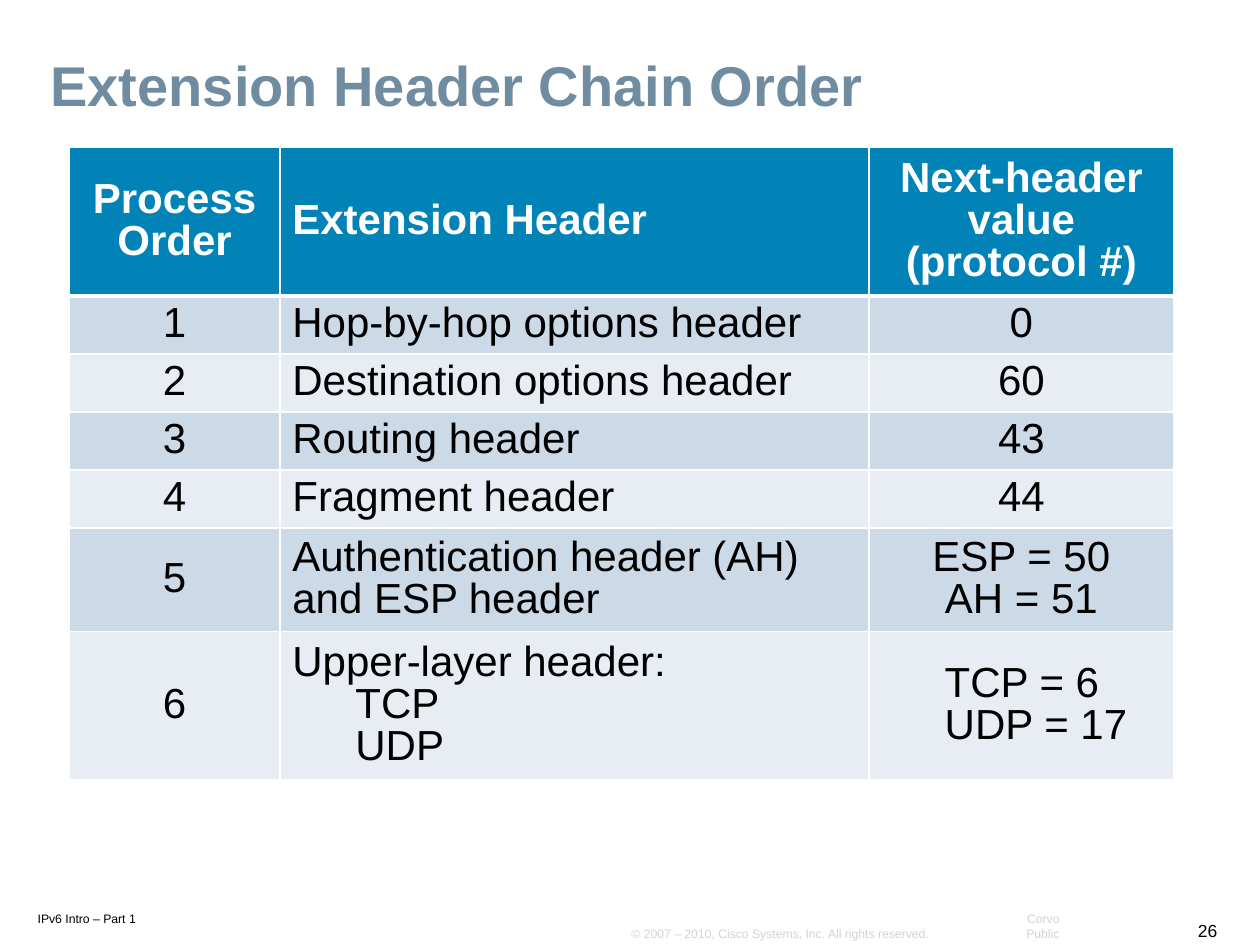
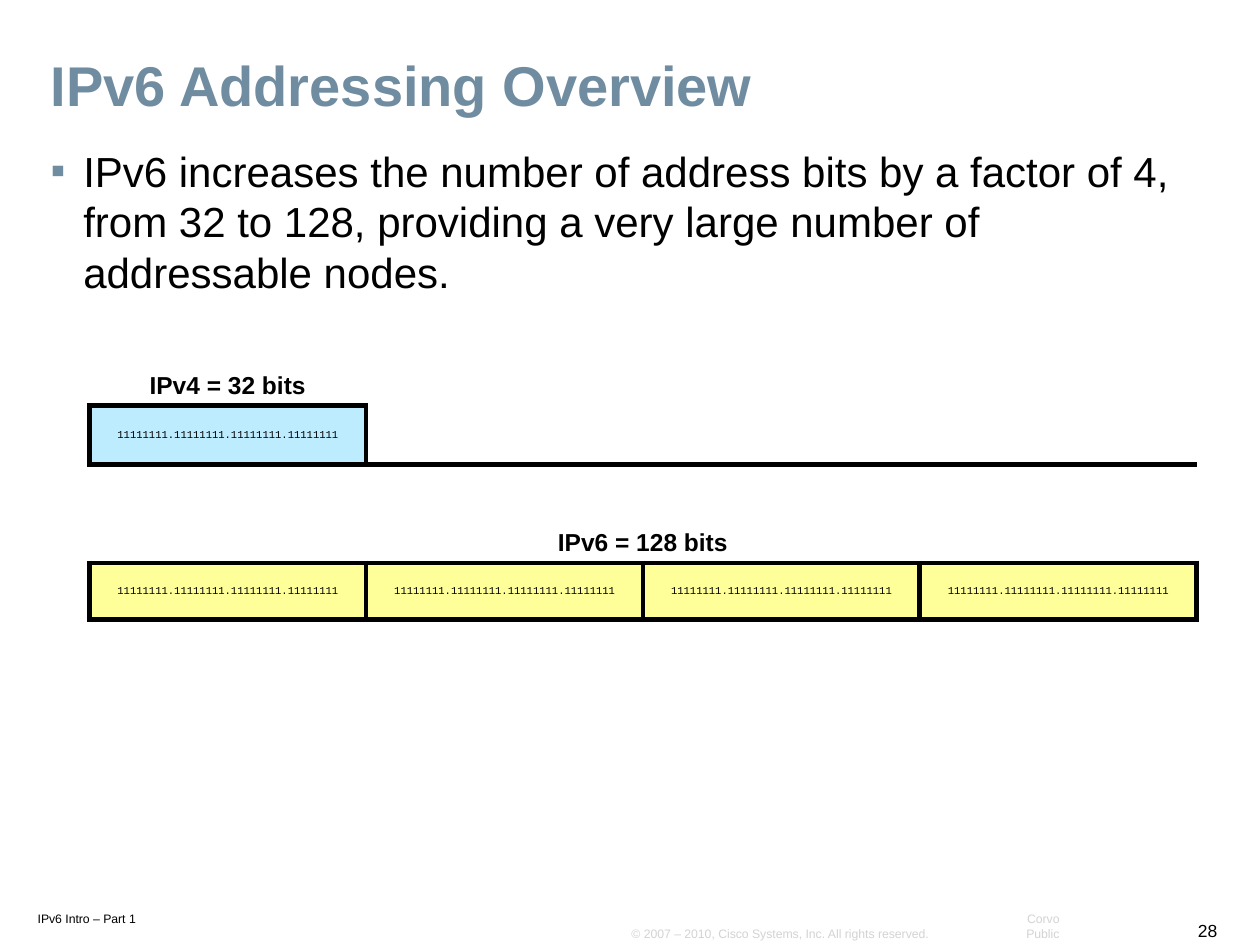
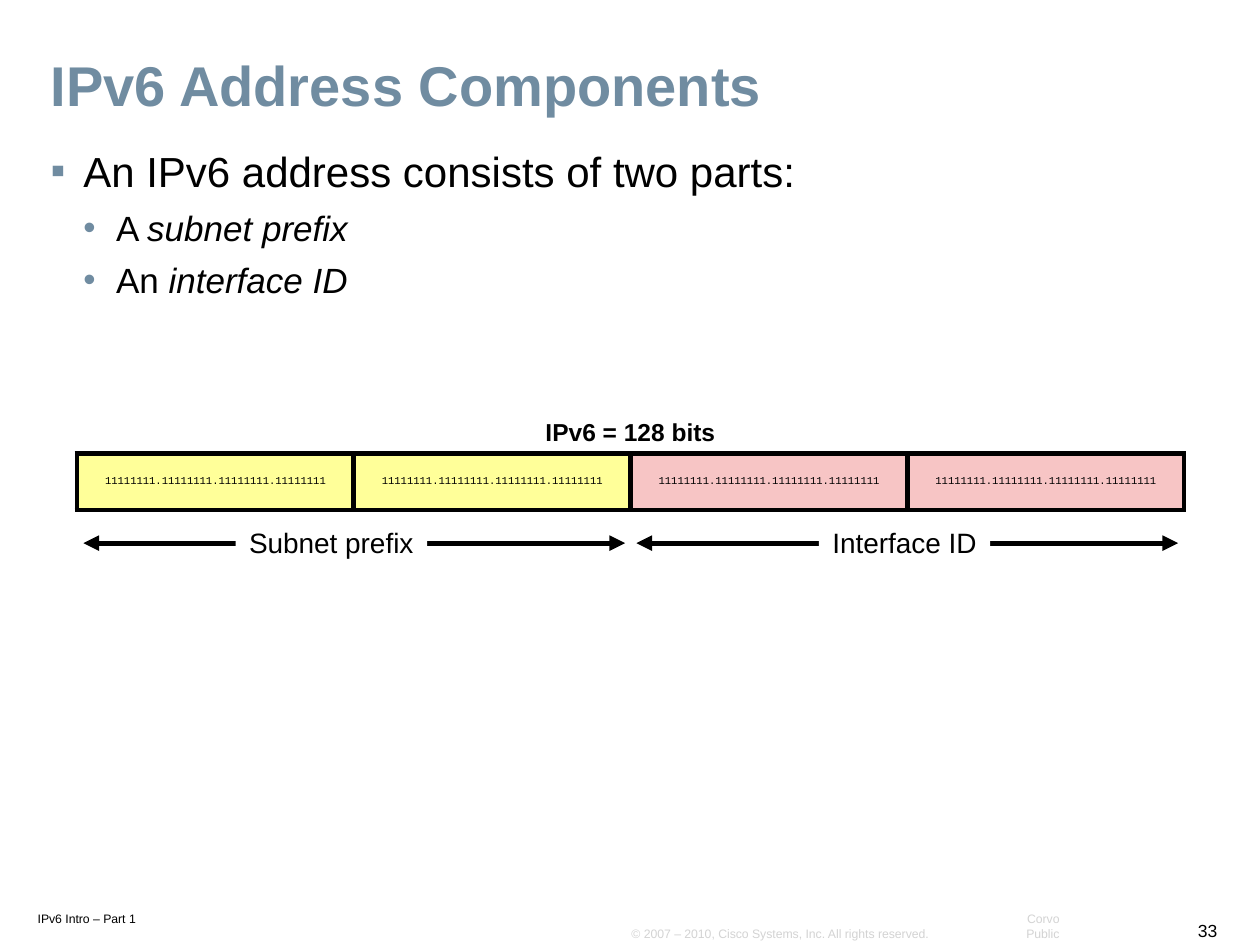
from dataclasses import dataclass

from lxml import etree
from pptx import Presentation
from pptx.dml.color import RGBColor
from pptx.enum.shapes import MSO_CONNECTOR as Connector, MSO_SHAPE as Shape
from pptx.enum.text import MSO_ANCHOR as Anchor, PP_ALIGN as Align
from pptx.oxml.ns import qn
from pptx.util import Cm, Pt


@dataclass(frozen=True)
class Theme:
    font: str = "Arial"
    code_font: str = "Courier New"
    text: str = "000000"
    white: str = "FFFFFF"
    accent: str = "708CA1"
    faint: str = "D3D3D3"
    header: str = "0183B7"
    band_dark: str = "CCD9E6"
    band_light: str = "E7EDF3"
    blue: str = "BEECFF"
    yellow: str = "FFFF99"
    pink: str = "F7C5C5"
    title_size: float = 32
    body_size: float = 24
    sub_size: float = 20
    label_size: float = 16
    caption_size: float = 14
    number_size: float = 10
    footer_size: float = 7
    bits_size: float = 6


theme = Theme()
PLAIN_TABLE = "{2D5ABB26-0587-4C30-8999-92F81FD0307C}"
BITS = ".".join(["1" * 8] * 4)


def write(frame, text, *, size=theme.body_size, color=theme.text, font=theme.font,
          bold=False, italic_end="", align=Align.LEFT, spacing=None, after=None,
          indent=0, hanging=0, bullet=None):
    """Add one paragraph per line of text, filling an empty first paragraph."""
    for line in text.split("\n"):
        first = frame.paragraphs[0]
        paragraph = frame.add_paragraph() if first.runs else first
        properties = paragraph._p.get_or_add_pPr()
        if indent:
            properties.set("marL", str(Cm(indent)))
            properties.set("indent", str(-Cm(hanging)))
        if bullet:
            bullet_color = etree.SubElement(properties, qn("a:buClr"))
            etree.SubElement(bullet_color, qn("a:srgbClr"), val=theme.accent)
            etree.SubElement(properties, qn("a:buFont"), typeface=theme.font)
            etree.SubElement(properties, qn("a:buChar"), char=bullet)
        paragraph.alignment = align
        paragraph.line_spacing = spacing
        paragraph.space_after = after
        for part, italic in ((line, False), (italic_end, True)):
            if part:
                run = paragraph.add_run()
                run.text = part
                run.font.size, run.font.name = Pt(size), font
                run.font.bold, run.font.italic = bold, italic
                run.font.color.rgb = RGBColor.from_string(color)


def style_cell(cell, fill=None, borders=None, color=theme.text):
    """Set the fill and the borders, given as {side: width in points}."""
    cell.vertical_anchor = Anchor.MIDDLE
    properties = cell._tc.get_or_add_tcPr()
    for side in "LRTB":
        if side in (borders or {}):
            line = etree.SubElement(properties, qn(f"a:ln{side}"), w=str(Pt(borders[side])))
            solid = etree.SubElement(line, qn("a:solidFill"))
            etree.SubElement(solid, qn("a:srgbClr"), val=color)
    if fill:
        cell.fill.solid()
        cell.fill.fore_color.rgb = RGBColor.from_string(fill)
    else:
        cell.fill.background()


presentation = Presentation()
presentation.slide_width, presentation.slide_height = Cm(25.4), Cm(19.05)

# Title and footers of every slide
slides = []
for title, number in (("Extension Header Chain Order", "26"),
                      ("IPv6 Addressing Overview", "28"),
                      ("IPv6 Address Components", "33")):
    slide = presentation.slides.add_slide(presentation.slide_layouts[6])
    slides.append(slide)
    footer = dict(size=theme.footer_size)
    faint = dict(size=theme.footer_size, color=theme.faint)
    for text, left, top, width, height, anchor, wrap, style in (
        (title, 0.79, 1.02, 23.67, 1.52, Anchor.MIDDLE, True,
         dict(size=theme.title_size, color=theme.accent, bold=True, spacing=0.9)),
        ("IPv6 Intro – Part 1", 0.53, 18.24, 2.67, 0.53, Anchor.BOTTOM, True, footer),
        (number, 23.88, 18.42, 0.89, 0.66, Anchor.BOTTOM, False,
         dict(size=theme.number_size, align=Align.RIGHT)),
        ("© 2007 – 2010, Cisco Systems, Inc. All rights reserved.",
         12.5, 18.54, 6.53, 0.53, Anchor.BOTTOM, False, faint),
        ("Corvo Public", 19.79, 18.54, 1.8, 0.53, Anchor.BOTTOM, False,
         dict(faint, align=Align.RIGHT)),
    ):
        frame = slide.shapes.add_textbox(Cm(left), Cm(top), Cm(width), Cm(height)).text_frame
        frame.word_wrap, frame.vertical_anchor = wrap, anchor
        frame.margin_left = frame.margin_right = Cm(0.23)
        frame.margin_top = frame.margin_bottom = Cm(0.11)
        write(frame, text, **style)
order_slide, overview_slide, components_slide = slides

# Bulleted text: (level, text, italic ending)
for slide, bullets in (
    (overview_slide, [(0, "IPv6 increases the number of address bits by a factor of 4, from 32 "
                          "to 128, providing a very large number of addressable nodes.", "")]),
    (components_slide, [(0, "An IPv6 address consists of two parts:", ""),
                        (1, "A ", "subnet prefix"),
                        (1, "An ", "interface ID")]),
):
    frame = slide.shapes.add_textbox(Cm(0.79), Cm(2.82), Cm(23.67), Cm(15.14)).text_frame
    frame.word_wrap = True
    frame.margin_left = frame.margin_right = Cm(0.23)
    frame.margin_top = frame.margin_bottom = Cm(0.11)
    for level, text, ending in bullets:
        write(frame, text, italic_end=ending, bullet="▪•"[level], after=Pt(6),
              size=(theme.body_size, theme.sub_size)[level],
              indent=0.66 * (level + 1), hanging=0.66)

# Empty tables: slide, left, top, column widths, row heights
tables = []
for slide, left, top, widths, heights in (
    (order_slide, 1.4, 2.97, [4.24, 11.88, 6.14], [1.04] * 7),
    (overview_slide, 1.8, 6.99, [5.58] * 4, [1.19, 1.19, 1.98, 1.14]),
    (components_slide, 1.55, 7.16, [5.58] * 4, [1.98, 1.14]),
):
    table = slide.shapes.add_table(len(heights), len(widths), Cm(left), Cm(top),
                                   Cm(sum(widths)), Cm(sum(heights))).table
    table.first_row = table.horz_banding = False
    table._tbl.tblPr.find(qn("a:tableStyleId")).text = PLAIN_TABLE
    for column, width in zip(table.columns, widths):
        column.width = Cm(width)
    for row, height in zip(table.rows, heights):
        row.height = Cm(height)
    tables.append(table)
order_table, overview_table, components_table = tables

# Extension header order
order_rows = [
    ("Process Order", "Extension Header", "Next-header value\n(protocol #)"),
    ("1", "Hop-by-hop options header", "0"),
    ("2", "Destination options header", "60"),
    ("3", "Routing header", "43"),
    ("4", "Fragment header", "44"),
    ("5", "Authentication header (AH) and ESP header", "ESP = 50\nAH = 51"),
    ("6", "Upper-layer header:", ""),
]
for row_index, row in enumerate(order_rows):
    is_header = row_index == 0
    fill = theme.header if is_header else (theme.band_light, theme.band_dark)[row_index % 2]
    borders = dict(L=1, R=1, T=3 if row_index == 1 else 1, B=3 if is_header else 1)
    for column_index, text in enumerate(row):
        cell = order_table.cell(row_index, column_index)
        style_cell(cell, fill, borders, theme.white)
        if text:
            write(cell.text_frame, text, bold=is_header, spacing=0.9,
                  color=theme.white if is_header else theme.text,
                  align=Align.LEFT if column_index == 1 else Align.CENTER)
for column_index, protocols in ((1, "TCP\nUDP"), (2, "TCP = 6\nUDP = 17")):
    write(order_table.cell(6, column_index).text_frame, protocols, indent=1.27, spacing=0.9)

# Address lengths: captions over rows of 32-bit blocks
for table, row_index, caption, fills in (
    (overview_table, 0, "IPv4 = 32 bits", [theme.blue]),
    (overview_table, 2, "IPv6 = 128 bits", [theme.yellow] * 4),
    (components_table, 0, "IPv6 = 128 bits", [theme.yellow] * 2 + [theme.pink] * 2),
):
    for column_index in range(4):
        style_cell(table.cell(row_index, column_index),
                   borders=dict(T=3, B=3) if row_index
                   else dict(B=3) if column_index < len(fills) else {})
    caption_cell = table.cell(row_index, 0)
    if len(fills) == 4:
        caption_cell.merge(table.cell(row_index, 3))
    caption_cell.vertical_anchor = Anchor.BOTTOM
    write(caption_cell.text_frame, caption, size=theme.caption_size, bold=True,
          align=Align.CENTER)
    for column_index in range(4):
        cell = table.cell(row_index + 1, column_index)
        if column_index < len(fills):
            style_cell(cell, fills[column_index], dict.fromkeys("LRTB", 3))
            write(cell.text_frame, BITS, size=theme.bits_size, font=theme.code_font,
                  align=Align.CENTER)
        else:
            style_cell(cell, borders=dict(B=3))

# Spans of the two address parts
for text, arrow_left, label_left, label_width in (("Subnet prefix", 1.68, 4.75, 3.86),
                                                  ("Interface ID", 12.83, 16.51, 3.45)):
    arrow = slide.shapes.add_connector(Connector.STRAIGHT, Cm(arrow_left), Cm(10.95),
                                       Cm(arrow_left + 10.92), Cm(10.95))
    arrow.line.width = Pt(3)
    arrow.line.color.rgb = RGBColor.from_string(theme.text)
    for end in ("a:headEnd", "a:tailEnd"):
        etree.SubElement(arrow.line._get_or_add_ln(), qn(end), type="triangle")
    etree.SubElement(arrow._element.spPr, qn("a:effectLst"))

    label = slide.shapes.add_shape(Shape.RECTANGLE, Cm(label_left), Cm(10.46),
                                   Cm(label_width), Cm(0.94))
    label.shadow.inherit = False
    label.fill.solid()
    label.fill.fore_color.rgb = RGBColor.from_string(theme.white)
    label.line.fill.background()
    label.text_frame.word_wrap = False
    write(label.text_frame, text, size=theme.label_size, align=Align.CENTER)

presentation.save("out.pptx")
